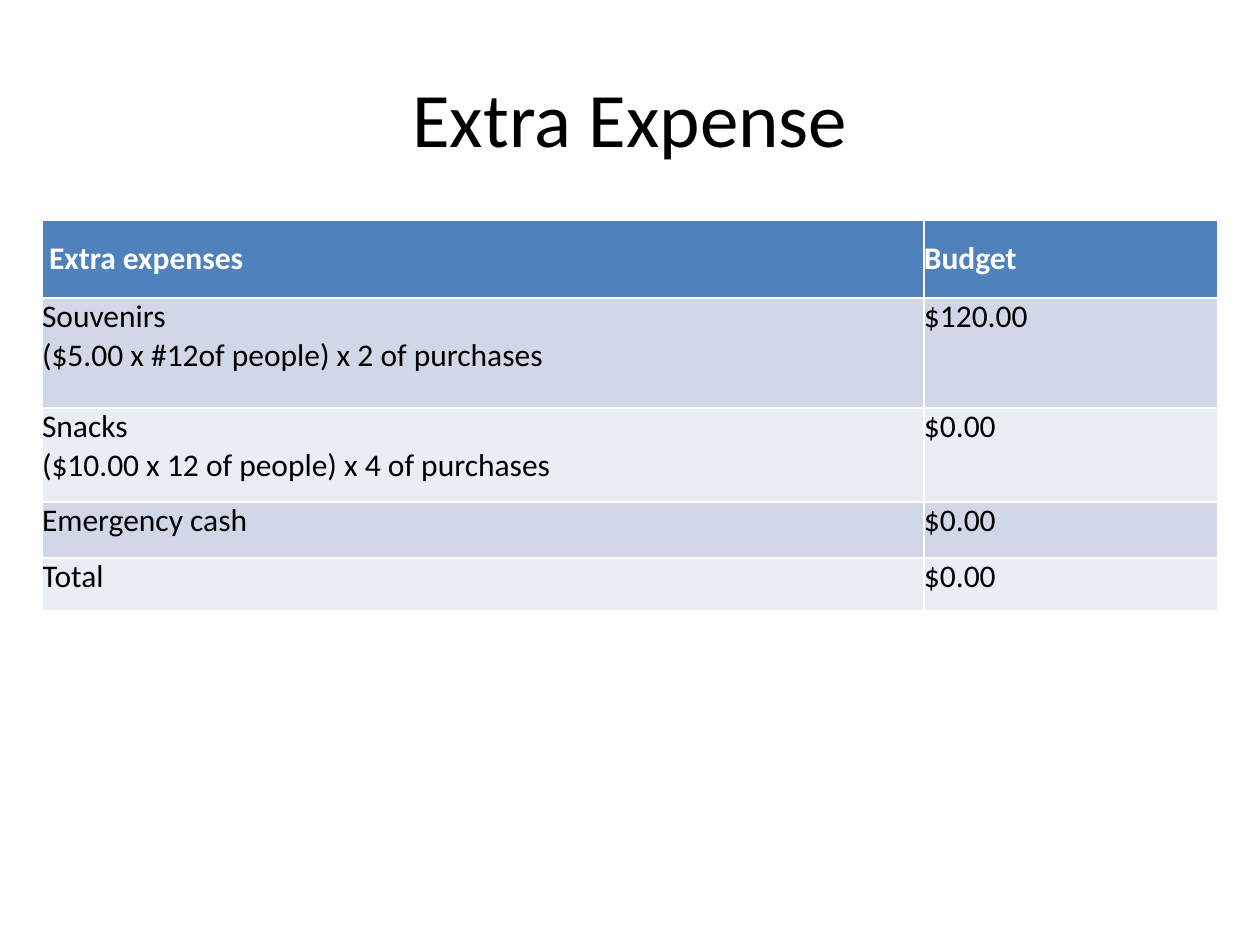
from pptx import Presentation
from pptx import util as u
from pptx.dml.color import RGBColor
from pptx.enum import text

PX = u.Inches(1) // 126
FONT = "Calibri"
WHITE, BLACK, HEADER_BLUE = "FFFFFF", "000000", "4F81BD"
BANDS = ("D0D8E8", "E9EDF4")

COLUMN_WIDTHS = (882, 294)
ROW_HEIGHTS = (78, 110, 94, 56, 53)
EXPENSES = (
    (" Extra expenses", "Budget"),
    ("Souvenirs\n($5.00 x #12of people) x 2 of purchases", "$120.00"),
    ("Snacks\n($10.00 x 12 of people) x 4 of purchases", "$0.00"),
    ("Emergency cash", "$0.00"),
    ("Total", "$0.00"),
)


def px(length):
    return u.Emu(length * PX)


def color(value):
    return RGBColor.from_string(value)


def format_text(frame, size, ink, bold=False, align=text.PP_ALIGN.LEFT):
    for para in frame.paragraphs:
        para.alignment = align
        for span in para.runs:
            span.font.name = FONT
            span.font.size = u.Pt(size)
            span.font.bold = bold
            span.font.color.rgb = color(ink)


def add_title(page, wording):
    title = page.shapes.title
    title.left, title.top, title.width, title.height = map(px, (63, 38, 1134, 157))
    title.text_frame.text = wording
    title.text_frame.vertical_anchor = text.MSO_ANCHOR.MIDDLE
    format_text(title.text_frame, 44, BLACK, align=text.PP_ALIGN.CENTER)


def fill_cell(cell, wording, is_header, background):
    cell.margin_left = cell.margin_right = cell.margin_top = cell.margin_bottom = 0
    cell.vertical_anchor = text.MSO_ANCHOR.MIDDLE if is_header else text.MSO_ANCHOR.TOP
    cell.fill.solid()
    cell.fill.fore_color.rgb = color(background)
    cell.text_frame.text = wording
    format_text(cell.text_frame, 18, WHITE if is_header else BLACK, is_header)


def add_expense_table(page):
    """Add the budget table; its default style supplies the white rules."""
    table = page.shapes.add_table(
        len(EXPENSES), len(COLUMN_WIDTHS), px(42), px(220),
        px(sum(COLUMN_WIDTHS)), px(sum(ROW_HEIGHTS))).table
    for column, width in zip(table.columns, COLUMN_WIDTHS):
        column.width = px(width)
    for index, (row, height, entries) in enumerate(zip(table.rows, ROW_HEIGHTS, EXPENSES)):
        row.height = px(height)
        is_header = index == 0
        background = HEADER_BLUE if is_header else BANDS[(index - 1) % 2]
        for cell, wording in zip(row.cells, entries):
            fill_cell(cell, wording, is_header, background)


def main():
    deck = Presentation()
    deck.slide_width, deck.slide_height = u.Inches(10), u.Inches(7.5)
    page = deck.slides.add_slide(deck.slide_layouts[5])
    add_title(page, "Extra Expense")
    add_expense_table(page)
    deck.save("out.pptx")


if __name__ == "__main__":
    main()
